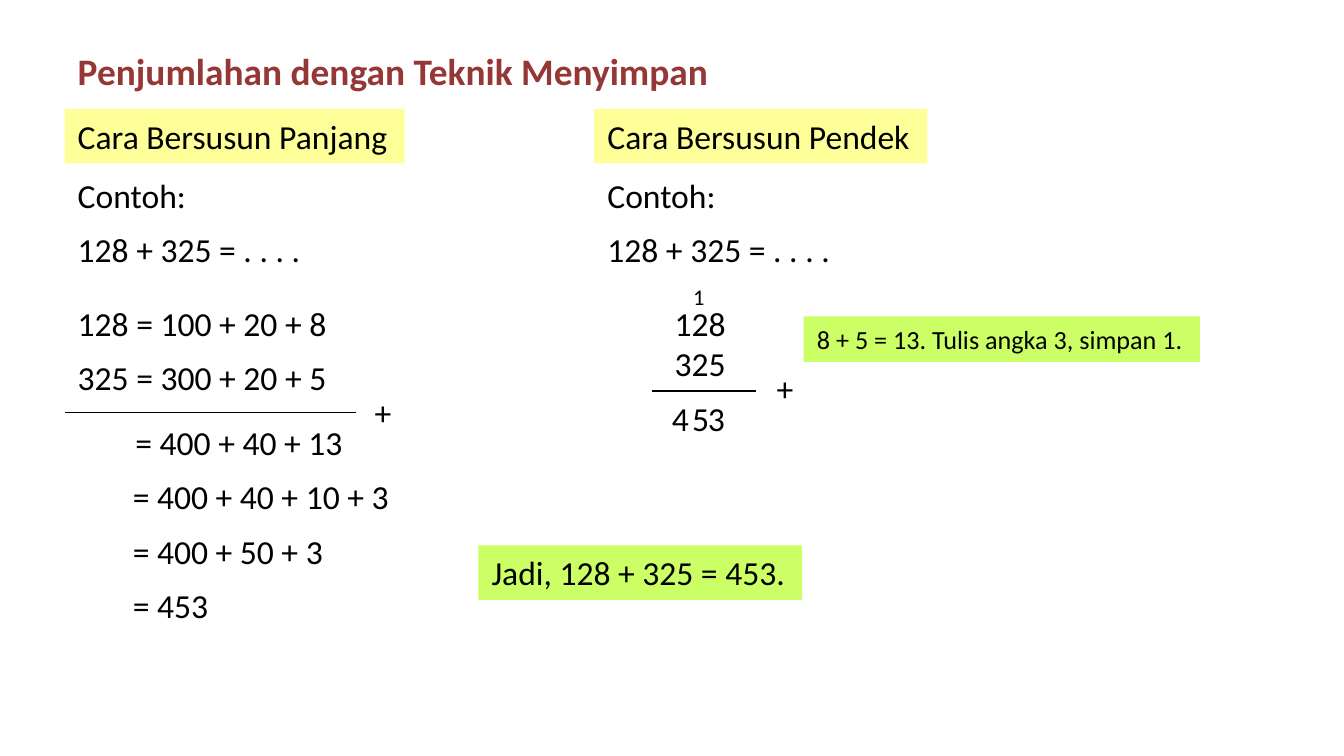
from dataclasses import dataclass

import pptx
import pptx.dml.color
import pptx.enum.shapes
import pptx.enum.text
import pptx.oxml
import pptx.slide
import pptx.util

Cm = pptx.util.Cm
COLORS = {
    "title": "953735",
    "text": "000000",
    "heading": "FFFF99",
    "note": "CCFF66",
}
LEFT_COLUMN = 1.22
RIGHT_COLUMN = 11.23
RESULT_LEFT = 2.26
RESULT_TOP = 7.85
ROW_HEIGHT = 1.03
SUM_TOP = 7.39


@dataclass
class Label:
    text: str
    left: float
    top: float
    width: float
    height: float = ROW_HEIGHT
    size: int = 18
    color: str = "text"
    fill: str = ""
    bold: bool = False


@dataclass
class Rule:
    left: float
    top: float
    width: float


def color_of(name: str) -> pptx.dml.color.RGBColor:
    return pptx.dml.color.RGBColor.from_string(COLORS[name])


def draw_label(slide: pptx.slide.Slide, label: Label) -> None:
    box = [Cm(value) for value in (label.left, label.top, label.width, label.height)]
    if label.fill:
        shape = slide.shapes.add_shape(pptx.enum.shapes.MSO_SHAPE.RECTANGLE, *box)
        shape.shadow.inherit = False
        shape.fill.solid()
        shape.fill.fore_color.rgb = color_of(label.fill)
        shape.line.fill.background()
    else:
        shape = slide.shapes.add_textbox(*box)
    text_frame = shape.text_frame
    text_frame.text = label.text
    text_frame.word_wrap = False
    text_frame.auto_size = pptx.enum.text.MSO_AUTO_SIZE.SHAPE_TO_FIT_TEXT
    text_frame.vertical_anchor = pptx.enum.text.MSO_ANCHOR.TOP
    for paragraph in text_frame.paragraphs:
        paragraph.alignment = pptx.enum.text.PP_ALIGN.LEFT
        for run in paragraph.runs:
            run.font.name = "Calibri"
            run.font.size = pptx.util.Pt(label.size)
            run.font.bold = label.bold
            run.font.color.rgb = color_of(label.color)


def draw_rule(slide: pptx.slide.Slide, rule: Rule) -> None:
    connector = slide.shapes.add_connector(
        pptx.enum.shapes.MSO_CONNECTOR.STRAIGHT,
        Cm(rule.left), Cm(rule.top), Cm(rule.left + rule.width), Cm(rule.top),
    )
    connector.line.color.rgb = color_of("text")
    connector.line.width = pptx.util.Pt(0.75)
    properties = connector._element.spPr
    properties.append(pptx.oxml.parse_xml(
        '<a:effectLst xmlns:a="http://schemas.openxmlformats.org/drawingml/2006/main"/>'
    ))


def column_labels(left: float, heading: str, heading_width: float) -> list[Label]:
    return [
        Label(heading, left, 2.06, heading_width, fill="heading"),
        Label("Contoh:", left, 3.18, 2.62),
        Label("128 + 325 = . . . .", left, 4.21, 4.78),
    ]


def long_method() -> list[Label]:
    results = [
        ("= 400 + 40 + 13", 2.31, 4.5),
        ("= 400 + 40 + 10 + 3", RESULT_LEFT, 5.44),
        ("= 400 + 50 + 3", RESULT_LEFT, 4.17),
        ("= 453", RESULT_LEFT, 1.96),
    ]
    return [
        *column_labels(LEFT_COLUMN, "Cara Bersusun Panjang", 6.43),
        Label("128 = 100 + 20 + 8", LEFT_COLUMN, 5.6, 5.28),
        Label("325 = 300 + 20 + 5", LEFT_COLUMN, 5.6 + ROW_HEIGHT, 5.28),
        Label("+", 6.83, 7.29, 0.84),
        *(
            Label(text, left, RESULT_TOP + row * ROW_HEIGHT, width)
            for row, (text, left, width) in enumerate(results)
        ),
    ]


def short_method() -> list[Label]:
    digits = [("3", 13.13), ("5", 12.83), ("4", 12.45)]
    return [
        *column_labels(RIGHT_COLUMN, "Cara Bersusun Pendek", 6.3),
        Label("128\n325", 12.5, 5.6, 1.5, 1.8),
        Label("+", 14.43, 6.83, 0.84),
        Label("1", 12.85, 5.23, 0.74, 0.77, size=12),
        *(Label(digit, left, SUM_TOP, 0.84) for digit, left in digits),
        Label("8 + 5 = 13. Tulis angka 3, simpan 1.", 15.19, 5.98, 7.49, 0.86,
              size=14, fill="note"),
    ]


def main() -> None:
    presentation = pptx.Presentation()
    presentation.slide_width = Cm(25.4)
    presentation.slide_height = Cm(14.29)
    slide = presentation.slides.add_slide(presentation.slide_layouts[6])
    labels = [
        Label("Penjumlahan dengan Teknik Menyimpan", LEFT_COLUMN, 0.79, 12.55, 1.11,
              size=20, color="title", bold=True),
        *long_method(),
        *short_method(),
        Label("Jadi, 128 + 325 = 453.", 9.04, 10.31, 6.12, fill="note"),
    ]
    for label in labels:
        draw_label(slide, label)
    for rule in (Rule(LEFT_COLUMN, 7.8, 5.51), Rule(12.32, SUM_TOP, 1.96)):
        draw_rule(slide, rule)
    presentation.save("out.pptx")


if __name__ == "__main__":
    main()
